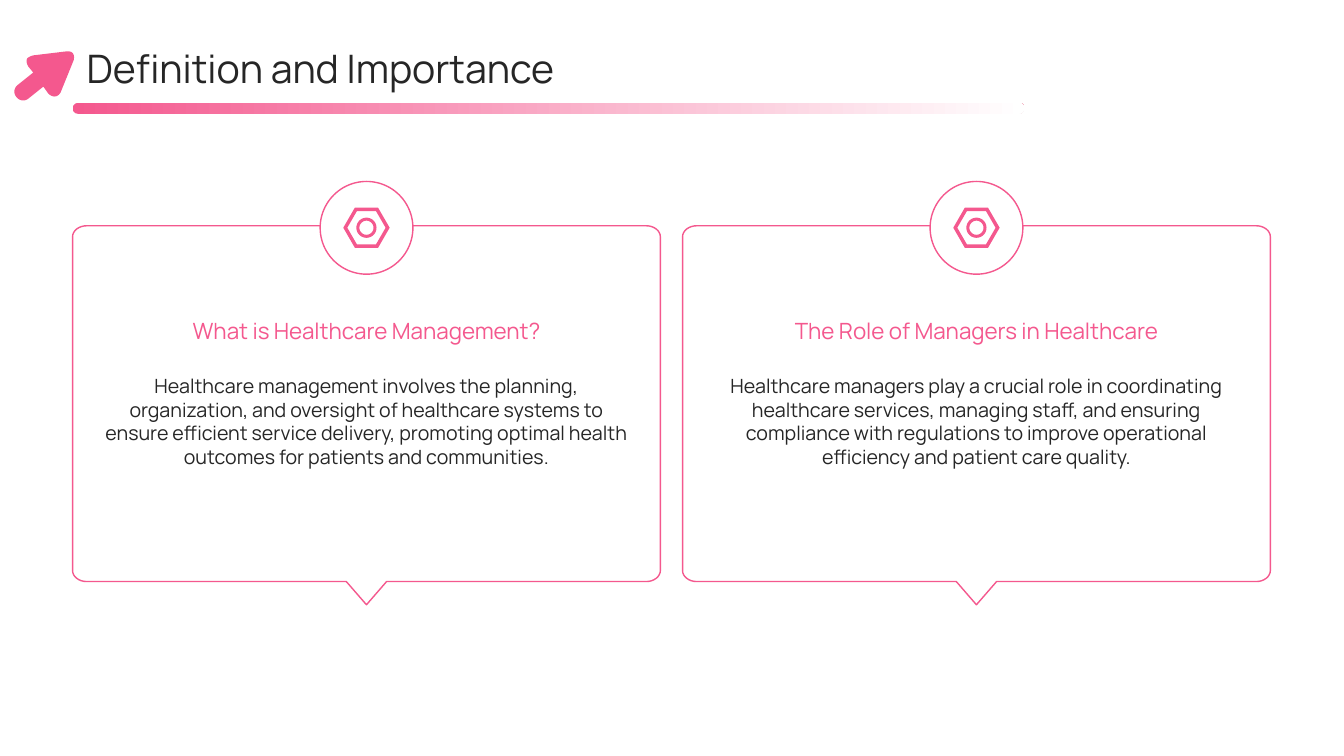
from math import cos, pi, sin
from pptx import Presentation
from pptx.dml.color import RGBColor
from pptx.enum.shapes import MSO_SHAPE
from pptx.enum.text import MSO_ANCHOR, PP_ALIGN
from pptx.util import Inches, Pt

PINK = RGBColor(0xF4, 0x58, 0x8E)
WHITE = RGBColor(0xFF, 0xFF, 0xFF)
DARK = RGBColor(0x26, 0x26, 0x26)
FONT = "Manrope"

TITLE = "Definition and Importance"
CARDS = [
    ("What is Healthcare Management?",
     "Healthcare management involves the planning, organization, and oversight of "
     "healthcare systems to ensure efficient service delivery, promoting optimal "
     "health outcomes for patients and communities."),
    ("The Role of Managers in Healthcare",
     "Healthcare managers play a crucial role in coordinating healthcare services, "
     "managing staff, and ensuring compliance with regulations to improve "
     "operational efficiency and patient care quality."),
]
LEFT, TOP, WIDE, HIGH, STEP = 0.72, 2.24, 5.83, 3.53, 6.05
ARROW = [
    (0.27, 0.58), (0.26, 0.6, 0.26, 0.62, 0.28, 0.66), (0.33, 0.72), (0.18, 0.84),
    (0.14, 0.87, 0.13, 0.92, 0.16, 0.96), (0.19, 1, 0.24, 1.01, 0.28, 0.98),
    (0.43, 0.86), (0.48, 0.93), (0.48, 0.93, 0.55, 1, 0.6, 0.92), (0.73, 0.6),
    (0.73, 0.6, 0.76, 0.5, 0.66, 0.51), (0.33, 0.55),
    (0.33, 0.55, 0.29, 0.56, 0.27, 0.58),
]


def paint(shape, fill, line=None):
    shape.shadow.inherit = False
    shape.fill.solid()
    shape.fill.fore_color.rgb = fill
    if line is None:
        shape.line.fill.background()
    else:
        shape.line.color.rgb = line
        shape.line.width = Pt(1)


def arc(x, y, wide, high, start, end, count):
    turns = [start + (end - start) * i / count for i in range(count + 1)]
    return [(x + wide * cos(t), y + high * sin(t)) for t in turns]


def bend(path, count=10):
    dots = []
    for part in path:
        if len(part) == 2:
            dots.append(part)
            continue
        ends = [dots[-1], part[:2], part[2:4], part[4:]]
        for i in range(1, count + 1):
            t = i / count
            rates = ((1 - t) ** 3, 3 * t * (1 - t) ** 2, 3 * t * t * (1 - t), t ** 3)
            dots.append(tuple(sum(r * e[k] for r, e in zip(rates, ends)) for k in (0, 1)))
    return dots


def draw(slide, loops, fill, line=None):
    loops = [[(Inches(x), Inches(y)) for x, y in loop] for loop in loops]
    pen = slide.shapes.build_freeform(*loops[0][0], scale=1.0)
    for loop in loops:
        pen.move_to(*loop[0])
        pen.add_line_segments(loop[1:], close=True)
    paint(pen.convert_to_shape(), fill, line)


def write(slide, text, box, size, color=DARK, align=PP_ALIGN.CENTER,
          anchor=MSO_ANCHOR.MIDDLE):
    frame = slide.shapes.add_textbox(*map(Inches, box)).text_frame
    frame.word_wrap = True
    frame.vertical_anchor = anchor
    frame.margin_left = frame.margin_right = frame.margin_top = frame.margin_bottom = 0
    para = frame.paragraphs[0]
    para.alignment = align
    run = para.add_run()
    run.text = text
    run.font.name = FONT
    run.font.size = Pt(size)
    run.font.color.rgb = color


def add_card(slide, left, head, body):
    right, base, mid = left + WIDE, TOP + HIGH, left + WIDE / 2
    rx, ry = 0.14, 0.11
    edge = (arc(left + rx, TOP + ry, rx, ry, pi, 1.5 * pi, 8)
            + arc(right - rx, TOP + ry, rx, ry, 1.5 * pi, 2 * pi, 8)
            + arc(right - rx, base - ry, rx, ry, 0, pi / 2, 8)
            + [(mid + 0.2, base), (mid, base + 0.23), (mid - 0.2, base)]
            + arc(left + rx, base - ry, rx, ry, pi / 2, pi, 8))
    draw(slide, [edge], WHITE, PINK)
    disc = slide.shapes.add_shape(MSO_SHAPE.FLOWCHART_CONNECTOR, Inches(mid - 0.46),
                                  Inches(1.8), Inches(0.92), Inches(0.92))
    paint(disc, WHITE, PINK)
    write(slide, body, (left + 0.32, 3.71, 5.19, 1.61), 14, anchor=MSO_ANCHOR.TOP)
    rings = [(0.07, 40), (0.1, 40), (0.19, 6), (0.23, 6)]
    draw(slide, [arc(mid, 2.26, r, r, 0, 2 * pi, n) for r, n in rings], PINK)
    write(slide, head, (left + 0.32, 2.89, 5.19, 0.77), 16, PINK)


def main():
    """Build the slide on definition and importance."""
    deck = Presentation()
    deck.slide_width, deck.slide_height = Inches(13.33), Inches(7.5)
    slide = deck.slides.add_slide(deck.slide_layouts[6])
    for i, (head, body) in enumerate(CARDS):
        add_card(slide, LEFT + i * STEP, head, body)
    write(slide, TITLE, (0.86, 0.42, 11.67, 0.51), 28, align=PP_ALIGN.LEFT)
    bar = slide.shapes.add_shape(MSO_SHAPE.ROUNDED_RECTANGLE, Inches(0.72),
                                 Inches(1.02), Inches(9.44), Inches(0.11))
    paint(bar, PINK)
    bar.adjustments[0] = 0.5
    bar.fill.gradient()
    bar.fill.gradient_angle = 0
    for stop, color, spot in zip(bar.fill.gradient_stops, (PINK, WHITE), (0, 1)):
        stop.color.rgb = color
        stop.position = spot
    draw(slide, [bend(ARROW)], PINK)
    deck.save("out.pptx")


if __name__ == "__main__":
    main()
